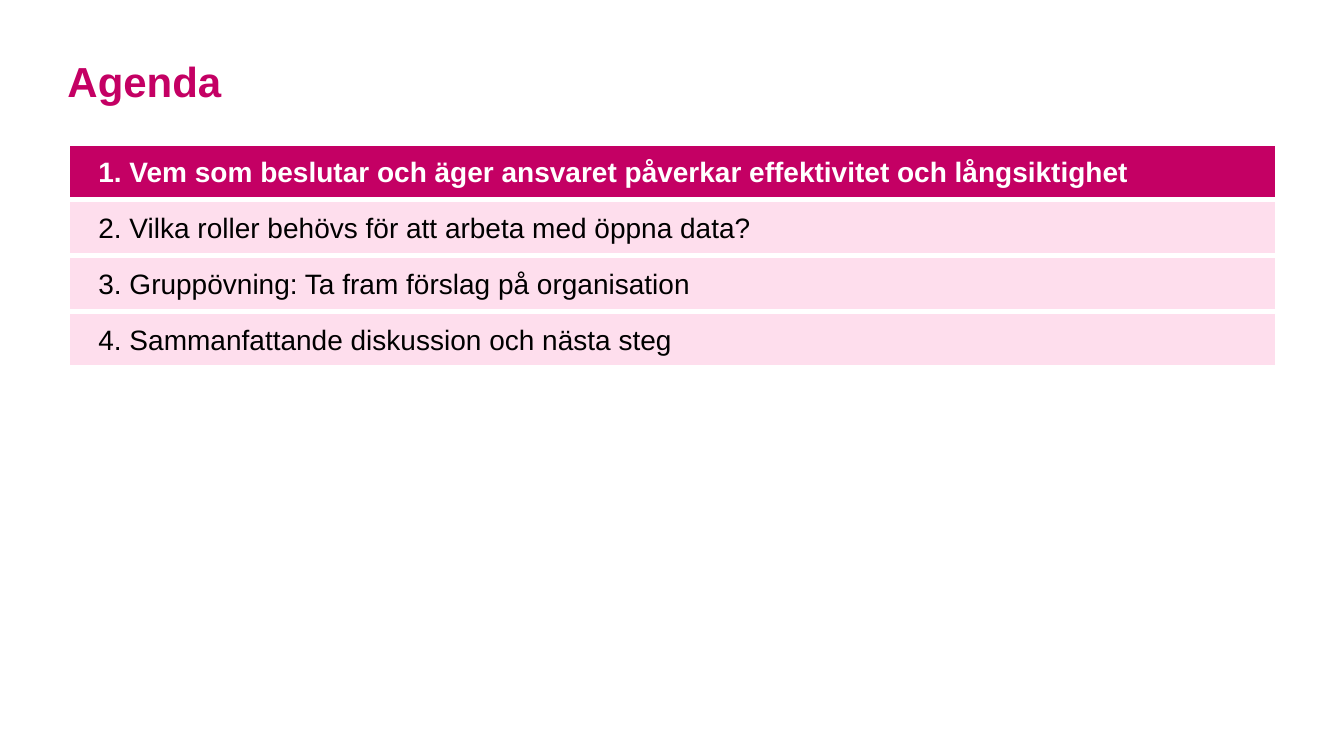
from dataclasses import dataclass

from pptx import Presentation
from pptx.dml.color import RGBColor
from pptx.enum.shapes import MSO_SHAPE as Shape
from pptx.enum.text import MSO_ANCHOR as Anchor, PP_ALIGN as Align
from pptx.util import Cm, Pt

TOPICS = [
    "Vem som beslutar och äger ansvaret påverkar effektivitet och långsiktighet",
    "Vilka roller behövs för att arbeta med öppna data?",
    "Gruppövning: Ta fram förslag på organisation",
    "Sammanfattande diskussion och nästa steg",
]
CURRENT_TOPIC = 1
LEFT, WIDTH = 1.7, 30.48
FIRST_ROW_TOP, ROW_HEIGHT = 3.62, 1.41


@dataclass(frozen=True)
class Theme:
    font: str = "Arial"
    accent: str = "C40064"
    tint: str = "FEDEED"
    light: str = "FFFFFF"
    dark: str = "000000"
    title_size: int = 30
    row_size: int = 20
    gap_line: int = 3


def set_attributes(target, values):
    for name, value in values.items():
        setattr(target, name, value)


class AgendaSlide:
    """Builds the agenda slide from one theme."""

    def __init__(self, presentation, theme):
        self.theme = theme
        self.slide = presentation.slides.add_slide(presentation.slide_layouts[5])

    def set_text(self, shape, text, size, color, bold, frame_format, paragraph_format):
        frame = shape.text_frame
        frame.text = text
        set_attributes(frame, {"word_wrap": True, **frame_format})
        paragraph = frame.paragraphs[0]
        set_attributes(paragraph, {"alignment": Align.LEFT, **paragraph_format})
        font = paragraph.font
        set_attributes(font, {"name": self.theme.font, "size": Pt(size), "bold": bold})
        font.color.rgb = RGBColor.from_string(color)

    def add_title(self, text):
        title = self.slide.shapes.title
        set_attributes(title, {
            "left": Cm(LEFT), "top": Cm(1.27), "width": Cm(WIDTH), "height": Cm(2.31),
        })
        margins = dict.fromkeys(
            ("margin_left", "margin_top", "margin_right", "margin_bottom"), 0)
        self.set_text(title, text, self.theme.title_size, self.theme.accent, True,
                      {"vertical_anchor": Anchor.TOP, **margins}, {"line_spacing": 1.1})

    def add_row(self, number, topic, current):
        theme = self.theme
        top = FIRST_ROW_TOP + (number - 1) * ROW_HEIGHT
        row = self.slide.shapes.add_shape(
            Shape.RECTANGLE, Cm(LEFT), Cm(top), Cm(WIDTH), Cm(ROW_HEIGHT))
        row.shadow.inherit = False
        row.fill.solid()
        row.fill.fore_color.rgb = RGBColor.from_string(
            theme.accent if current else theme.tint)
        row.line.color.rgb = RGBColor.from_string(theme.light)
        row.line.width = Pt(theme.gap_line)
        self.set_text(row, f"{number}. {topic}", theme.row_size,
                      theme.light if current else theme.dark, current,
                      {"vertical_anchor": Anchor.MIDDLE, "margin_left": Cm(0.78),
                       "margin_top": Cm(0.28), "margin_right": 0,
                       "margin_bottom": Cm(0.28)}, {})


def main():
    presentation = Presentation()
    set_attributes(presentation, {"slide_width": Cm(33.87), "slide_height": Cm(19.05)})
    agenda = AgendaSlide(presentation, Theme())
    agenda.add_title("Agenda")
    for number, topic in enumerate(TOPICS, start=1):
        agenda.add_row(number, topic, number == CURRENT_TOPIC)
    presentation.save("out.pptx")


if __name__ == "__main__":
    main()
